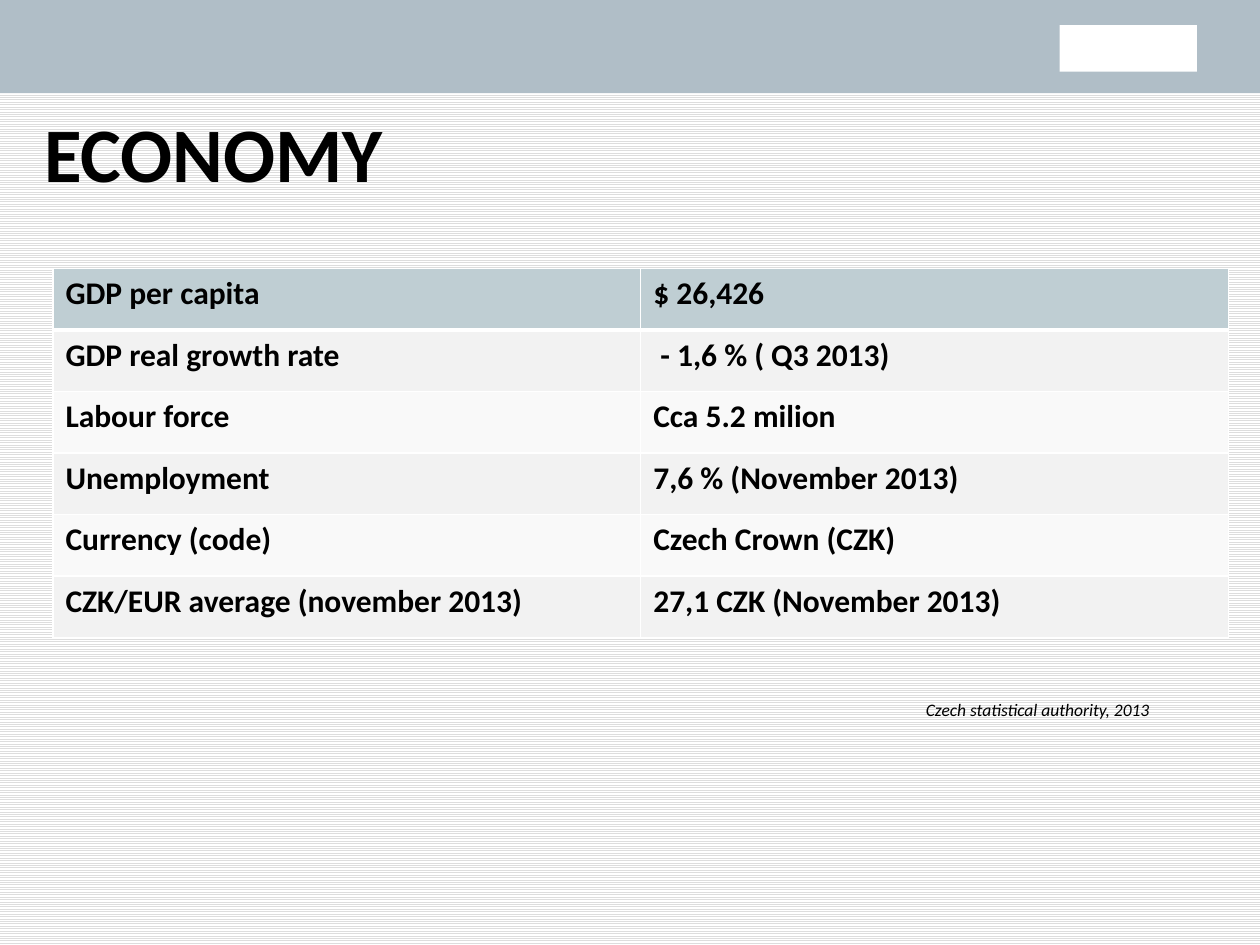
"""Build the economy slide with its table of key indicators."""
from lxml import etree
from pptx import Presentation
from pptx.dml.color import RGBColor
from pptx.enum import dml, shapes, text
from pptx.oxml import ns
from pptx.util import Inches, Pt

COLORS = {
    "band": "B0BEC7", "white": "FFFFFF", "black": "000000", "stripe": "DDDDDD",
    "header": "BFCED3", "odd": "F2F2F2", "even": "F9F9F9",
}
INDICATORS = [
    ("GDP per capita", "$ 26,426"),
    ("GDP real growth rate", " - 1,6 % ( Q3 2013)"),
    ("Labour force", "Cca 5.2 milion"),
    ("Unemployment", "7,6 % (November 2013)"),
    ("Currency (code)", "Czech Crown (CZK)"),
    ("CZK/EUR average (november 2013)", "27,1 CZK (November 2013)"),
]


def color(name):
    return RGBColor.from_string(COLORS[name])


def box(left, top, width, height):
    return [Inches(value) for value in (left, top, width, height)]


def format_text(frame, size, bold=False, italic=False):
    for paragraph in frame.paragraphs:
        paragraph.alignment = text.PP_ALIGN.LEFT
        for run in paragraph.runs:
            font = run.font
            font.name, font.size = "Calibri", Pt(size)
            font.bold, font.italic = bold, italic
            font.color.rgb = color("black")


def set_background(slide):
    fill = slide.background.fill
    fill.patterned()
    fill.pattern = dml.MSO_PATTERN.LIGHT_HORIZONTAL
    fill.fore_color.rgb = color("stripe")
    fill.back_color.rgb = color("white")


def add_block(slide, place, fill):
    block = slide.shapes.add_shape(shapes.MSO_SHAPE.RECTANGLE, *box(*place))
    block.shadow.inherit = False
    block.fill.solid()
    block.fill.fore_color.rgb = color(fill)
    block.line.fill.background()


def set_title(slide, heading):
    title = slide.shapes.title
    title.left, title.top, title.width, title.height = box(0.25, 0.58, 9, 1.25)
    title.text_frame.text = heading
    title.text_frame.vertical_anchor = text.MSO_ANCHOR.MIDDLE
    format_text(title.text_frame, 44, bold=True)


def set_borders(cell, widths):
    properties = cell._tc.get_or_add_tcPr()
    for index, (side, width) in enumerate(widths.items()):
        line = etree.Element(ns.qn(f"a:ln{side}"), w=str(Pt(width)))
        fill = etree.SubElement(line, ns.qn("a:solidFill"))
        etree.SubElement(fill, ns.qn("a:srgbClr"), val=COLORS["white"])
        properties.insert(index, line)


def add_indicators(slide):
    frame = slide.shapes.add_table(len(INDICATORS), 2, *box(0.42, 2.13, 9.33, 2.93))
    table = frame.table
    for r, row in enumerate(INDICATORS):
        row_fill = "header" if r == 0 else "odd" if r % 2 else "even"
        widths = {"L": 1, "R": 1, "T": 3 if r == 1 else 1, "B": 3 if r == 0 else 1}
        for c, entry in enumerate(row):
            cell = table.cell(r, c)
            cell.text_frame.text = entry
            format_text(cell.text_frame, 18, bold=True)
            cell.fill.solid()
            cell.fill.fore_color.rgb = color(row_fill)
            set_borders(cell, widths)


def add_credit(slide, credit):
    frame = slide.shapes.add_textbox(*box(7.25, 5.5, 2.58, 0.27)).text_frame
    frame.word_wrap = True
    frame.auto_size = text.MSO_AUTO_SIZE.SHAPE_TO_FIT_TEXT
    frame.text = credit
    format_text(frame, 10, italic=True)


def main():
    deck = Presentation()
    deck.slide_width, deck.slide_height = Inches(10), Inches(7.5)
    slide = deck.slides.add_slide(deck.slide_layouts[5])
    set_background(slide)
    add_block(slide, (0, 0, 10, 0.74), "band")
    add_block(slide, (8.41, 0.2, 1.09, 0.37), "white")
    set_title(slide, "ECONOMY")
    add_indicators(slide)
    add_credit(slide, "Czech statistical authority, 2013")
    deck.save("out.pptx")


if __name__ == "__main__":
    main()
